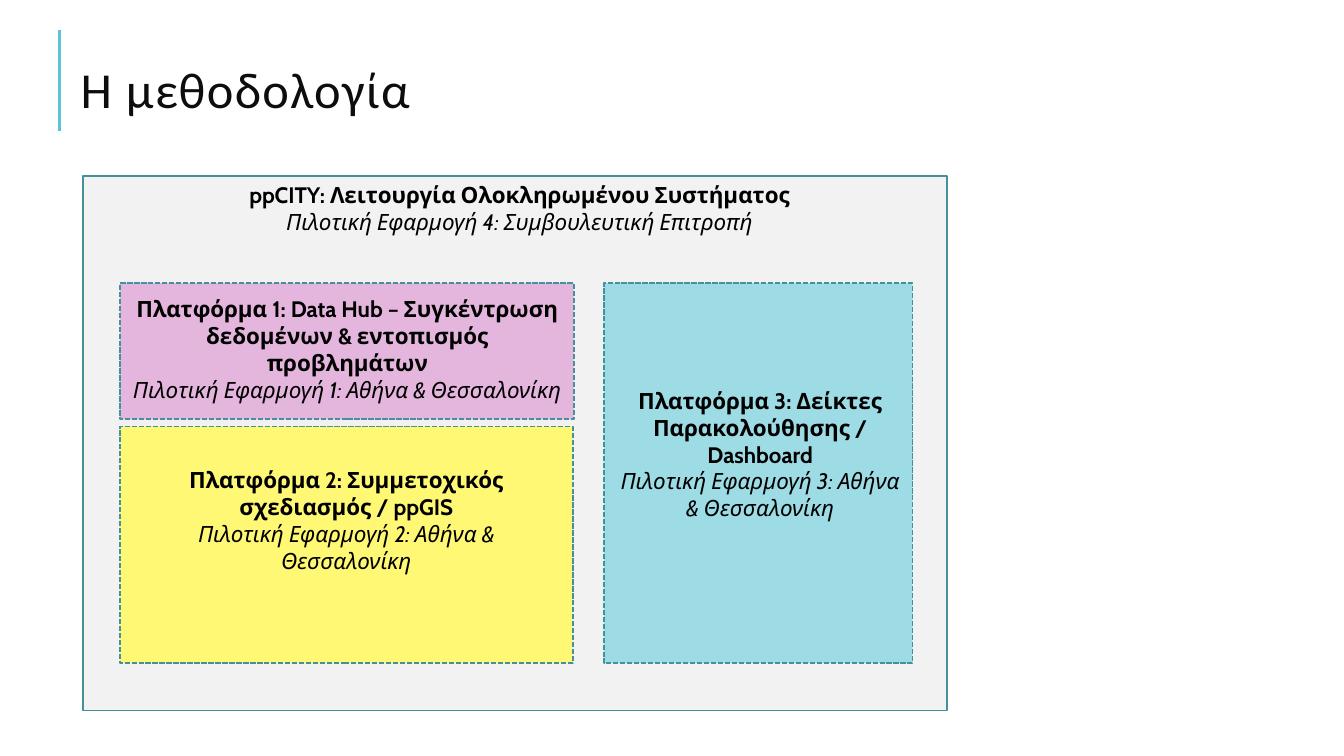
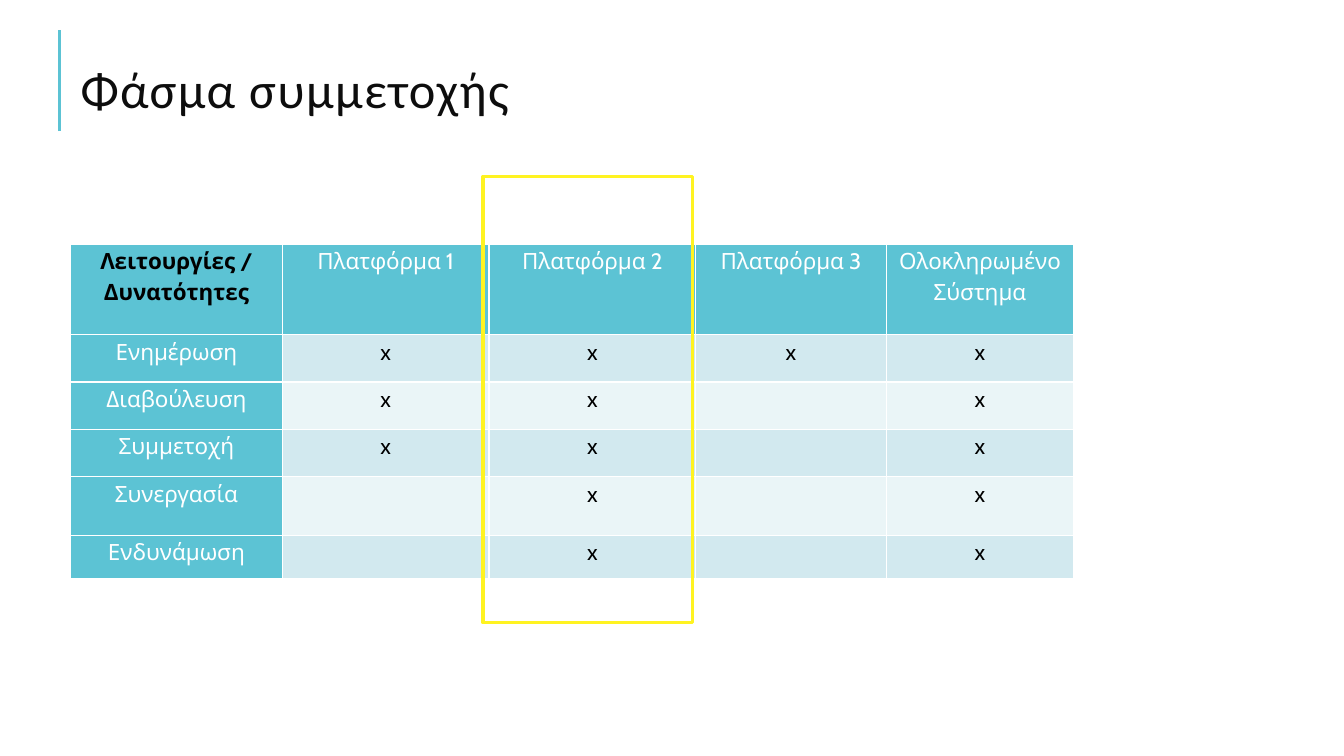
from dataclasses import dataclass
from lxml import etree
from pptx import Presentation
from pptx import util as u
from pptx.dml.color import RGBColor
from pptx.enum import dml, shapes, text
from pptx.oxml.ns import qn

PX = 9144


@dataclass(frozen=True)
class Theme:
    ink: str = "000000"
    title: str = "0D0D0D"
    white: str = "FFFFFF"
    accent: str = "5CC3D4"
    outline: str = "44909D"
    system: str = "F2F2F2"
    data_hub: str = "E4B6DD"
    planning: str = "FFF875"
    dashboard: str = "9DDBE5"
    highlight: str = "FFF321"
    bands: tuple = ("D2E9EF", "EAF5F7")
    title_font: str = "Calibri"
    body_font: str = "Cabin"
    title_size: int = 36
    body_size: int = 16


def px(*lengths):
    return [u.Emu(length * PX) for length in lengths]


def rgb(value):
    return RGBColor.from_string(value)


class Deck:
    def __init__(self, theme):
        self.theme = theme
        self.deck = Presentation()
        self.deck.slide_width, self.deck.slide_height = px(1333, 750)
        self.slide = None

    def new_slide(self, title):
        self.slide = self.deck.slides.add_slide(self.deck.slide_layouts[6])
        self.rule(59, 130, 59, 30)
        frame = self.text_frame(70, 11, 965, 164)
        frame.vertical_anchor = text.MSO_ANCHOR.MIDDLE
        heading = frame.paragraphs[0]
        heading.line_spacing = 0.8
        run = self.run(heading, title, name=self.theme.title_font,
                       size=u.Pt(self.theme.title_size), color=self.theme.title)
        run.font._element.set("spc", "100")

    def rule(self, *ends):
        rule = self.slide.shapes.add_connector(shapes.MSO_CONNECTOR.STRAIGHT, *px(*ends))
        rule.line.color.rgb = rgb(self.theme.accent)
        rule.line.width = u.Pt(1.5)
        etree.SubElement(rule._element.spPr, qn("a:effectLst"))

    def text_frame(self, *place):
        frame = self.slide.shapes.add_textbox(*px(*place)).text_frame
        frame.word_wrap = True
        return frame

    def run(self, paragraph, words, color=None, **formats):
        run = paragraph.add_run()
        run.text = words
        values = {"name": self.theme.body_font, "size": u.Pt(self.theme.body_size),
                  "bold": False, "italic": False} | formats
        for attribute, value in values.items():
            setattr(run.font, attribute, value)
        run.font.color.rgb = rgb(color or self.theme.ink)
        return run

    def panel(self, *place, fill=None, line=None, width=1.25, dashed=False):
        panel = self.slide.shapes.add_shape(shapes.MSO_SHAPE.RECTANGLE, *px(*place))
        panel.shadow.inherit = False
        if fill:
            panel.fill.solid()
            panel.fill.fore_color.rgb = rgb(fill)
        else:
            panel.fill.background()
        panel.line.color.rgb = rgb(line or self.theme.outline)
        panel.line.width = u.Pt(width)
        if dashed:
            panel.line.dash_style = dml.MSO_LINE.SQUARE_DOT

    def caption(self, *place, name, pilot):
        frame = self.text_frame(*place)
        self.run(frame.paragraphs[0], name, bold=True)
        self.run(frame.add_paragraph(), pilot, italic=True)
        for paragraph in frame.paragraphs:
            paragraph.alignment = text.PP_ALIGN.CENTER

    def table(self, left, top, widths, heights, rows):
        table = self.slide.shapes.add_table(
            len(rows), len(widths), *px(left, top, sum(widths), sum(heights))).table
        table.first_row = table.horz_banding = False
        for column, width in zip(table.columns, px(*widths)):
            column.width = width
        for row, height in zip(table.rows, px(*heights)):
            row.height = height
        for r, row in enumerate(rows):
            for c, words in enumerate(row):
                heading = r == 0 or c == 0
                fill = self.theme.accent if heading else self.theme.bands[(r - 1) % 2]
                corner = r == c == 0
                color = self.theme.white if heading and not corner else self.theme.ink
                self.cell(table.cell(r, c), words, fill, color, corner)

    def cell(self, cell, words, fill, color, bold):
        side, flat = px(6, 0)
        margins = {"margin_left": side, "margin_right": side,
                   "margin_top": flat, "margin_bottom": flat}
        for attribute, value in margins.items():
            setattr(cell, attribute, value)
        properties = cell._tc.get_or_add_tcPr()
        for edge in ("lnL", "lnR", "lnT", "lnB"):
            border = etree.SubElement(properties, qn(f"a:{edge}"), w=str(u.Pt(1)))
            solid = etree.SubElement(border, qn("a:solidFill"))
            etree.SubElement(solid, qn("a:srgbClr"), val=self.theme.white)
        cell.fill.solid()
        cell.fill.fore_color.rgb = rgb(fill)
        if words:
            paragraph = cell.text_frame.paragraphs[0]
            paragraph.alignment = text.PP_ALIGN.CENTER
            paragraph.line_spacing = 1.15
            self.run(paragraph, words, color=color, bold=bold)


def methodology(deck):
    theme = deck.theme
    deck.new_slide("Η μεθοδολογία")
    deck.panel(82, 175, 857, 530, fill=theme.system)
    deck.caption(119, 175, 793, 64, name="ppCITY: Λειτουργία Ολοκληρωμένου Συστήματος",
                 pilot="Πιλοτική Εφαρμογή 4: Συμβουλευτική Επιτροπή")
    platforms = [
        ((119, 281, 450, 135), theme.data_hub, (120, 288, 449, 91),
         "Πλατφόρμα 1: Data Hub – Συγκέντρωση δεδομένων & εντοπισμός προβλημάτων"),
        ((119, 423, 449, 235), theme.planning, (120, 458, 447, 118),
         "Πλατφόρμα 2: Συμμετοχικός σχεδιασμός / ppGIS"),
        ((599, 281, 306, 377), theme.dashboard, (601, 379, 306, 202),
         "Πλατφόρμα 3: Δείκτες Παρακολούθησης / Dashboard"),
    ]
    for number, (area, fill, label, name) in enumerate(platforms, 1):
        deck.panel(*area, fill=fill, dashed=True)
        deck.caption(*label, name=name,
                     pilot=f"Πιλοτική Εφαρμογή {number}: Αθήνα & Θεσσαλονίκη")


def participation(deck):
    deck.new_slide("Φάσμα συμμετοχής")
    columns = ["Πλατφόρμα 1", "Πλατφόρμα 2", "Πλατφόρμα 3", "Ολοκληρωμένο Σύστημα"]
    levels = {
        "Ενημέρωση": (1, 1, 1, 1),
        "Διαβούλευση": (1, 1, 0, 1),
        "Συμμετοχή": (1, 1, 0, 1),
        "Συνεργασία": (0, 1, 0, 1),
        "Ενδυνάμωση": (0, 1, 0, 1),
    }
    rows = [["Λειτουργίες / Δυνατότητες", *columns]]
    rows += [[level, *("x" if mark else "" for mark in marks)]
             for level, marks in levels.items()]
    deck.table(70, 242, [210, 205, 205, 189, 186], [90, 47, 47, 47, 58, 43], rows)
    deck.panel(479, 175, 208, 443, line=deck.theme.highlight, width=2.25)


def main():
    deck = Deck(Theme())
    methodology(deck)
    participation(deck)
    deck.deck.save("out.pptx")


if __name__ == "__main__":
    main()
